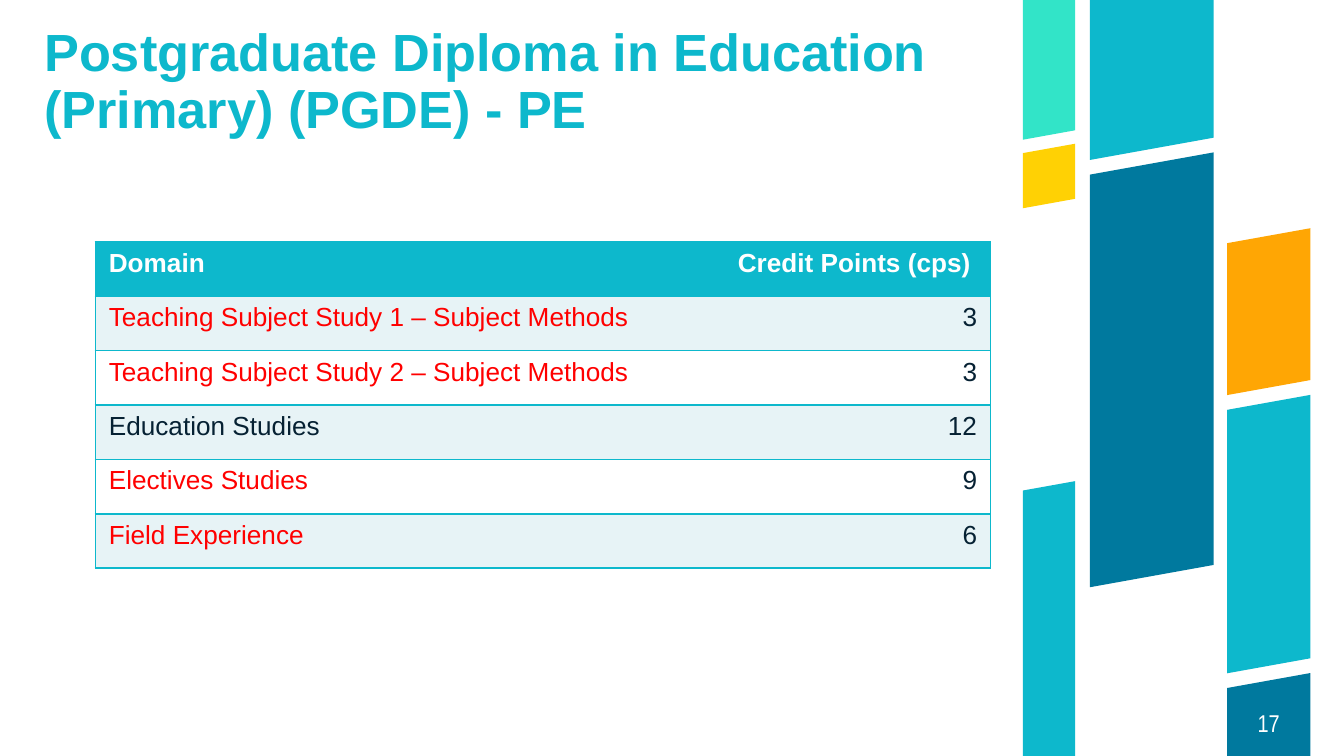
from lxml import etree
from pptx import Presentation
from pptx.dml.color import RGBColor
from pptx.enum.text import MSO_ANCHOR, PP_ALIGN
from pptx.oxml.ns import qn
from pptx.util import Inches, Pt

LEFT, CENTER, RIGHT = PP_ALIGN.LEFT, PP_ALIGN.CENTER, PP_ALIGN.RIGHT
BOTTOM, MIDDLE = MSO_ANCHOR.BOTTOM, MSO_ANCHOR.MIDDLE

TEAL = RGBColor(0x0D, 0xB8, 0xCC)
BLUE = RGBColor(0x00, 0x79, 0x9E)
MINT = RGBColor(0x32, 0xE4, 0xC8)
YELLOW = RGBColor(0xFF, 0xD1, 0x04)
ORANGE = RGBColor(0xFF, 0xA6, 0x04)
PALE = RGBColor(0xE7, 0xF3, 0xF6)
WHITE = RGBColor(0xFF, 0xFF, 0xFF)
RED = RGBColor(0xFF, 0x00, 0x00)
NAVY = RGBColor(0x06, 0x21, 0x33)

SLIDE_WIDTH = 10
SLIDE_HEIGHT = SLIDE_WIDTH * 9 / 16
SLANT = 0.18  # rise of a bar's edge per inch of width

# Bar columns: left, width, then (top, bottom, colour) measured on the left edge
BAR_COLUMNS = [
    (7.61, 0.39, [(3.65, SLIDE_HEIGHT, TEAL), (1.14, 1.55, YELLOW),
                  (0, 1.04, MINT)]),
    (8.11, 0.92, [(1.3, 4.37, BLUE), (0, 1.19, TEAL)]),
    (9.13, 0.62, [(1.81, 2.94, ORANGE), (5.12, SLIDE_HEIGHT, BLUE),
                  (3.05, 5.01, TEAL)]),
]

HEADER = ("Domain", "Credit Points (cps)")
# Domain, credit points, colour of the domain
DOMAINS = [
    ("Teaching Subject Study 1 – Subject Methods", 3, RED),
    ("Teaching Subject Study 2 – Subject Methods", 3, RED),
    ("Education Studies", 12, NAVY),
    ("Electives Studies", 9, RED),
    ("Field Experience", 6, RED),
]

TITLE_FONT = {"name": "Arial", "size": Pt(28), "bold": True}
NUMBER_FONT = {"name": "Arial Narrow", "size": Pt(13)}
HEADER_FONT = {"name": "Arial", "size": Pt(14), "bold": True}
BODY_FONT = {"name": "Arial", "size": Pt(14), "bold": False}


def write_text(frame, text, font_format, color, align=LEFT):
    paragraph = frame.paragraphs[0]
    paragraph.alignment = align
    run = paragraph.add_run()
    run.text = text
    for name, value in font_format.items():
        setattr(run.font, name, value)
    run.font.color.rgb = color
    return paragraph


def add_text(slide, box, anchor, *text_format):
    frame = slide.shapes.add_textbox(*map(Inches, box)).text_frame
    frame_format = {"word_wrap": True, "vertical_anchor": anchor,
                    "margin_left": 0, "margin_right": 0,
                    "margin_top": 0, "margin_bottom": 0}
    for name, value in frame_format.items():
        setattr(frame, name, value)
    return write_text(frame, *text_format)


def add_bar(slide, left, width, top, bottom, color):
    def right_end(y):
        # Edges that meet the slide border stay level
        return y if y in (0, SLIDE_HEIGHT) else y - width * SLANT

    right = left + width
    corners = [(left, top), (right, right_end(top)),
               (right, right_end(bottom)), (left, bottom)]
    points = [(Inches(x), Inches(y)) for x, y in corners]
    builder = slide.shapes.build_freeform(*points[0])
    builder.add_line_segments(points[1:], close=True)
    bar = builder.convert_to_shape()
    bar.shadow.inherit = False
    bar.fill.solid()
    bar.fill.fore_color.rgb = color
    bar.line.fill.background()


def set_borders(cell, hidden_side):
    properties = cell._tc.get_or_add_tcPr()
    for position, side in enumerate(("lnL", "lnR", "lnT", "lnB")):
        line = etree.Element(qn(f"a:{side}"), w=str(Pt(1)))
        if side == hidden_side:
            etree.SubElement(line, qn("a:noFill"))
        else:
            fill = etree.SubElement(line, qn("a:solidFill"))
            etree.SubElement(fill, qn("a:srgbClr"), val=str(TEAL))
        properties.insert(position, line)


def fill_cell(cell, fill, hidden_side, *text_format):
    cell.fill.solid()
    cell.fill.fore_color.rgb = fill
    set_borders(cell, hidden_side)
    write_text(cell.text_frame, *text_format)


def add_credit_table(slide):
    box = map(Inches, (0.71, 1.8, 6.67, 2.43))
    table = slide.shapes.add_table(len(DOMAINS) + 1, 2, *box).table
    for column, width in zip(table.columns, (4.68, 1.98)):
        column.width = Inches(width)

    # The line between the two columns is hidden
    for column, (text, side) in enumerate(zip(HEADER, ("lnR", "lnL"))):
        fill_cell(table.cell(0, column), TEAL, side, text, HEADER_FONT, WHITE)
    for row, (domain, points, color) in enumerate(DOMAINS, start=1):
        fill = PALE if row % 2 else WHITE
        fill_cell(table.cell(row, 0), fill, "lnR", domain, BODY_FONT, color)
        fill_cell(table.cell(row, 1), fill, "lnL", str(points), BODY_FONT,
                  NAVY, RIGHT)


def main():
    presentation = Presentation()
    presentation.slide_width = Inches(SLIDE_WIDTH)
    presentation.slide_height = Inches(SLIDE_HEIGHT)
    slide = presentation.slides.add_slide(presentation.slide_layouts[6])

    # Slanted bars on the right
    for left, width, bars in BAR_COLUMNS:
        for bar in bars:
            add_bar(slide, left, width, *bar)

    # Title and slide number
    title = add_text(slide, (0.33, 0.48, 7.22, 0.56), BOTTOM,
                     "Postgraduate Diploma in Education (Primary) (PGDE) - PE",
                     TITLE_FONT, TEAL)
    title.line_spacing = 0.9
    add_text(slide, (9.13, 5.13, 0.62, 0.5), MIDDLE,
             "17", NUMBER_FONT, WHITE, CENTER)

    # Credit points by domain
    add_credit_table(slide)

    presentation.save("out.pptx")


if __name__ == "__main__":
    main()
